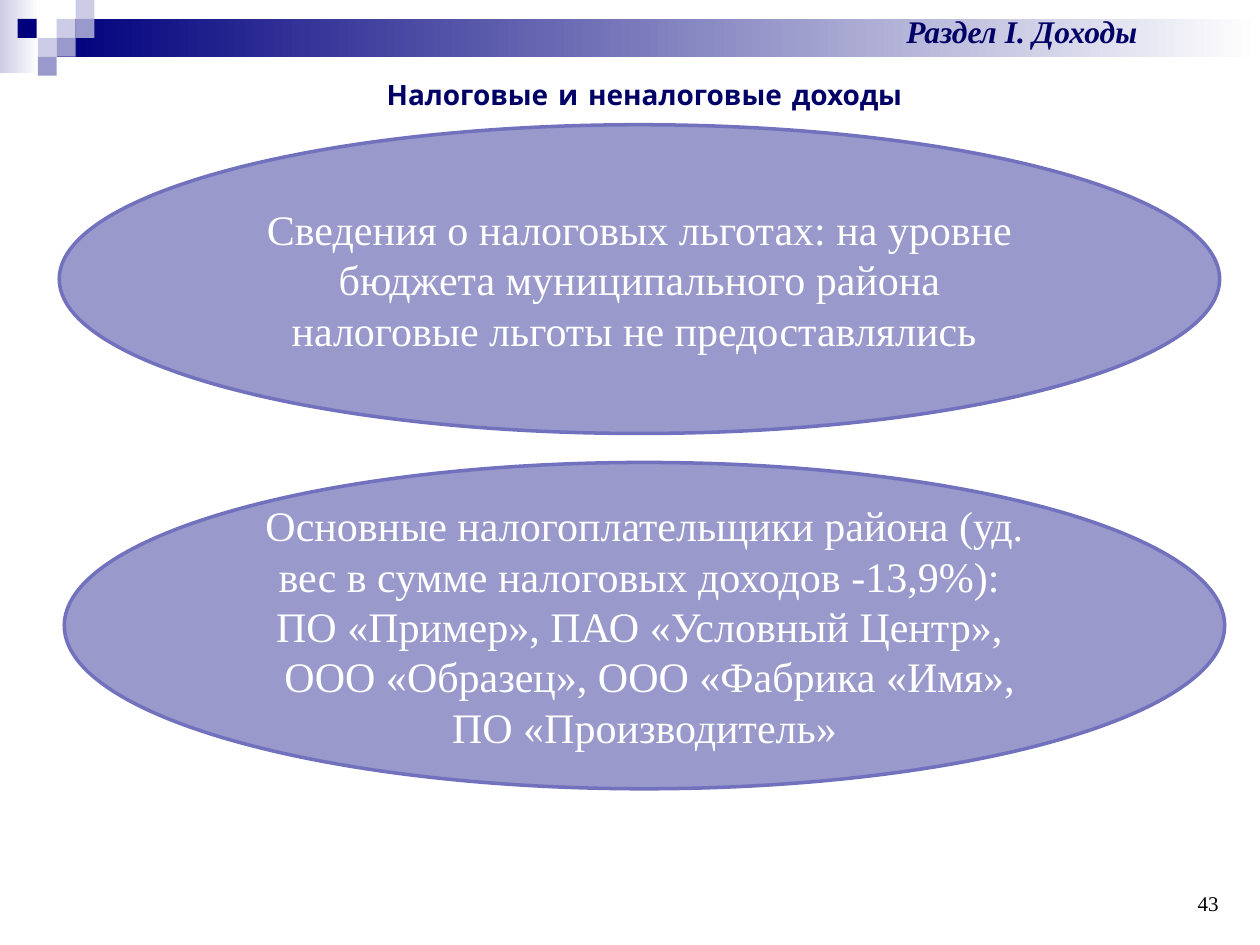
import pptx
import pptx.util
import pptx.dml.color
import pptx.enum.shapes
import pptx.enum.text

Inches = pptx.util.Inches
Pt = pptx.util.Pt
SHAPE = pptx.enum.shapes.MSO_SHAPE
ALIGN = pptx.enum.text.PP_ALIGN
ANCHOR = pptx.enum.text.MSO_ANCHOR

COLORS = {
    "navy": "00007D",
    "title": "000066",
    "lilac": "9999CC",
    "pale": "CCCCE6",
    "outline": "7171BD",
    "white": "FFFFFF",
    "black": "000000",
}
SERIF = "Times New Roman"
SQUARE = 0.15

# Header mosaic: left, top, colour
MOSAIC = [
    (0.45, 0.15, "pale"),
    (0.6, 0, "pale"),
    (0.6, 0.15, "lilac"),
    (0.3, 0.3, "pale"),
    (0.14, 0.15, "navy"),
    (0.45, 0.3, "lilac"),
    (0.3, 0.45, "lilac"),
]

TAX_RELIEF = [
    "Сведения о налоговых льготах: на уровне бюджета муниципального района "
    "налоговые льготы не предоставлялись ",
]
TAXPAYERS = [
    "Основные налогоплательщики района (уд. вес в сумме налоговых доходов -13,9%): ",
    "ПО «Пример», ПАО «Условный Центр», ",
    " ООО «Образец», ООО «Фабрика «Имя», ПО «Производитель»",
]


def rgb(name):
    return pptx.dml.color.RGBColor.from_string(COLORS[name])


def add_shape(slide, kind, left, top, width, height):
    shape = slide.shapes.add_shape(
        kind, Inches(left), Inches(top), Inches(width), Inches(height))
    shape.shadow.inherit = False
    shape.line.fill.background()
    return shape


def add_square(slide, left, top, color):
    square = add_shape(slide, SHAPE.RECTANGLE, left, top, SQUARE, SQUARE)
    square.fill.solid()
    square.fill.fore_color.rgb = rgb(color)


def add_fading_band(slide, left, top, width, height, color):
    band = add_shape(slide, SHAPE.RECTANGLE, left, top, width, height)
    band.fill.gradient()
    band.fill.gradient_angle = 0
    for stop, name, position in zip(band.fill.gradient_stops, (color, "white"), (0, 1)):
        stop.color.rgb = rgb(name)
        stop.position = position


def write_text(frame, lines, size, color, align=ALIGN.CENTER, anchor=ANCHOR.TOP,
               font=SERIF, bold=False, italic=False):
    frame.word_wrap = True
    frame.vertical_anchor = anchor
    for index, line in enumerate(lines):
        para = frame.add_paragraph() if index else frame.paragraphs[0]
        para.alignment = align
        span = para.add_run()
        span.text = line
        span.font.name = font
        span.font.size = Pt(size)
        span.font.bold = bold
        span.font.italic = italic
        span.font.color.rgb = rgb(color)


def add_label(slide, left, top, width, height, text, size, color, **style):
    box = slide.shapes.add_textbox(
        Inches(left), Inches(top), Inches(width), Inches(height))
    write_text(box.text_frame, [text], size, color, **style)


def add_ellipse(slide, left, top, width, height, lines):
    ellipse = add_shape(slide, SHAPE.OVAL, left, top, width, height)
    ellipse.fill.solid()
    ellipse.fill.fore_color.rgb = rgb("lilac")
    ellipse.line.color.rgb = rgb("outline")
    ellipse.line.width = Pt(2)
    write_text(ellipse.text_frame, lines, 24, "white", anchor=ANCHOR.MIDDLE)


def main():
    deck = pptx.Presentation()
    deck.slide_width = Inches(10)
    deck.slide_height = Inches(7.5)
    slide = deck.slides.add_slide(deck.slide_layouts[6])

    # Header decoration
    add_fading_band(slide, 0, 0, 0.31, 0.58, "pale")
    add_fading_band(slide, 0.45, 0.15, 9.55, 0.3, "navy")
    for left, top, color in MOSAIC:
        add_square(slide, left, top, color)

    # Page number
    add_label(slide, 7.44, 6.82, 2.33, 0.5, "43", 12, "black",
              align=ALIGN.RIGHT, anchor=ANCHOR.BOTTOM)

    # Statements
    add_ellipse(slide, 0.47, 0.99, 9.21, 2.45, TAX_RELIEF)
    add_ellipse(slide, 0.51, 3.67, 9.21, 2.59, TAXPAYERS)

    # Section name and title
    add_label(slide, 6.26, 0.05, 3.7, 0.4, "Раздел I. Доходы", 18, "title",
              bold=True, italic=True)
    add_label(slide, 0.87, 0.57, 8.49, 0.37, "Налоговые и неналоговые доходы",
              16, "title", font="Comic Neue", bold=True)

    deck.save("out.pptx")


if __name__ == "__main__":
    main()
